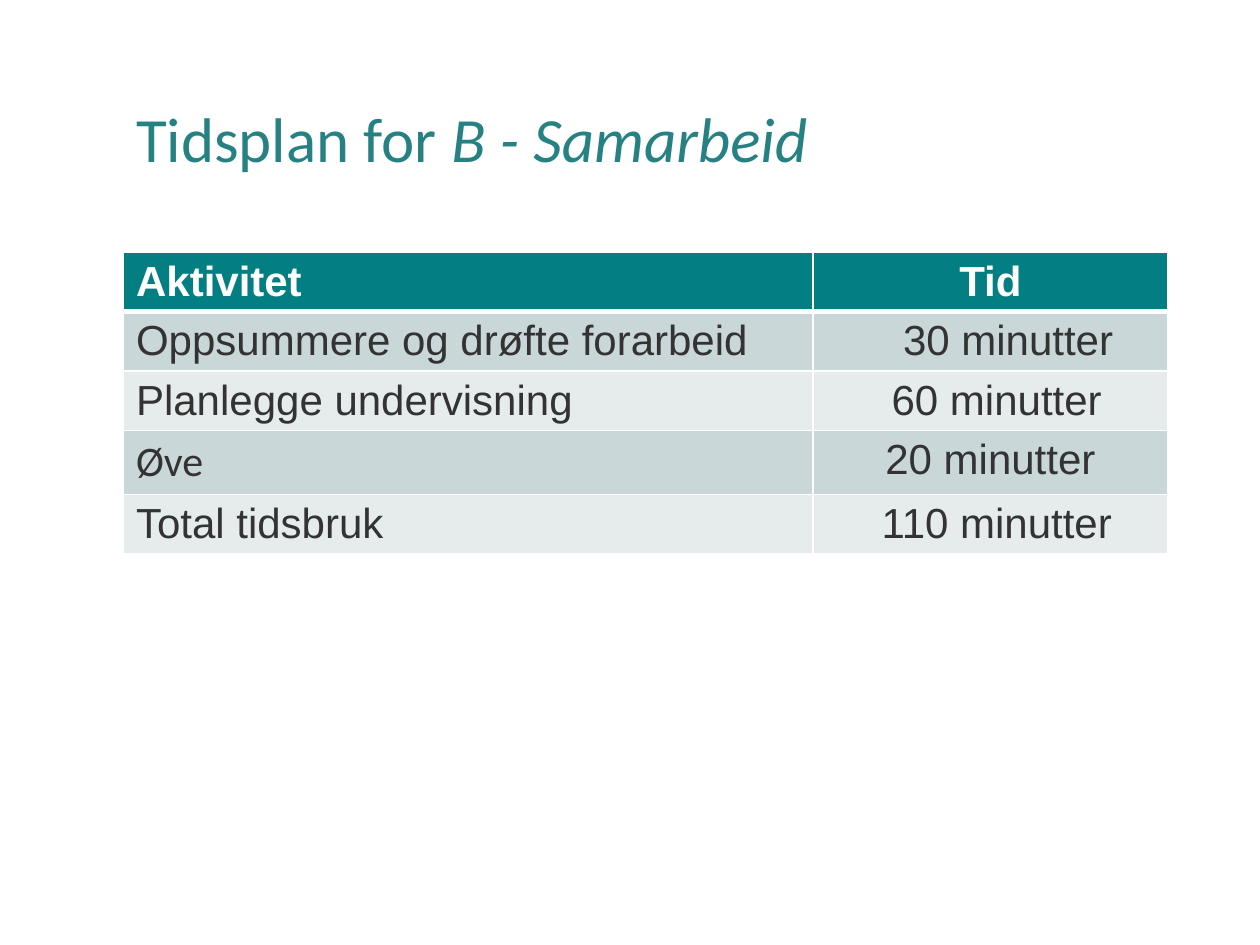
from lxml.etree import SubElement
from pptx import Presentation
from pptx.dml.color import RGBColor
from pptx.enum.text import MSO_ANCHOR, MSO_AUTO_SIZE, PP_ALIGN
from pptx.oxml.ns import qn
from pptx.util import Inches, Pt

COLORS = {"title": "268183", "header": "037F83", "odd": "CAD7D8",
          "even": "E6ECEC", "text": "333333", "white": "FFFFFF"}
WIDTH, HEIGHT = 10, 7.5
LEFT, SPAN = 0.098 * WIDTH, 0.829 * WIDTH
ACTIVITY_SHARE = 0.66
ROW_HEIGHT = 0.41
MARGIN = 0.1
ROWS = [
    ("Aktivitet", "Tid", "Arial", 0),
    ("Oppsummere og drøfte forarbeid", "30 minutter", "Arial", 0.28),
    ("Planlegge undervisning", "60 minutter", "Arial", 0.1),
    ("Øve", "20 minutter", "Calibri", 0),
    ("Total tidsbruk", "110 minutter", "Arial", 0.1),
]


def add_text(p, text, size=24, font="Arial", color="text", bold=False,
             italic=False, align=PP_ALIGN.LEFT):
    """Append a formatted run to a paragraph."""
    p.alignment = align
    r = p.add_run()
    r.text = text
    r.font.size, r.font.name = Pt(size), font
    r.font.bold, r.font.italic = bold, italic
    r.font.color.rgb = RGBColor.from_string(COLORS[color])


def add_borders(cell, top=1, bottom=1):
    """Draw white lines on the four sides of a cell."""
    tc_pr = cell._tc.get_or_add_tcPr()
    for side, width in (("L", 1), ("R", 1), ("T", top), ("B", bottom)):
        ln = SubElement(tc_pr, qn(f"a:ln{side}"), w=str(Pt(width)))
        fill = SubElement(ln, qn("a:solidFill"))
        SubElement(fill, qn("a:srgbClr"), val=COLORS["white"])


def fill_title(s, left, top, width, height):
    """Place and write the slide title."""
    sp = s.shapes.title
    sp.left, sp.top = Inches(left), Inches(top)
    sp.width, sp.height = Inches(width), Inches(height)
    tf = sp.text_frame
    tf.auto_size = MSO_AUTO_SIZE.NONE
    tf.vertical_anchor = MSO_ANCHOR.MIDDLE
    p = tf.paragraphs[0]
    p.line_spacing = 0.9
    for text, italic in (("Tidsplan for ", False), ("B - Samarbeid", True)):
        add_text(p, text, size=36, font="Calibri", color="title", italic=italic)


def add_schedule(s, left, top, width, height):
    """Add the table of activities and times."""
    table = s.shapes.add_table(len(ROWS), 2, Inches(left), Inches(top),
                               Inches(width), Inches(height)).table
    for col, share in zip(table.columns, (ACTIVITY_SHARE, 1 - ACTIVITY_SHARE)):
        col.width = Inches(width * share)
    for i, (activity, time, font, indent) in enumerate(ROWS):
        header = i == 0
        fill = "header" if header else ("even", "odd")[i % 2]
        columns = ((activity, font, PP_ALIGN.LEFT, 0),
                   (time, "Arial", PP_ALIGN.CENTER, indent))
        for j, (text, face, align, extra) in enumerate(columns):
            cell = table.cell(i, j)
            add_borders(cell, top=3 if i == 1 else 1, bottom=3 if header else 1)
            cell.fill.solid()
            cell.fill.fore_color.rgb = RGBColor.from_string(COLORS[fill])
            cell.margin_left = Inches(MARGIN + extra)
            add_text(cell.text_frame.paragraphs[0], text, font=face, align=align,
                     color="white" if header else "text", bold=header)


def main():
    """Build and save the slide."""
    prs = Presentation()
    prs.slide_width, prs.slide_height = Inches(WIDTH), Inches(HEIGHT)
    s = prs.slides.add_slide(prs.slide_layouts[5])
    fill_title(s, LEFT, 0.4, SPAN, 1.45)
    add_schedule(s, LEFT, 2, SPAN, ROW_HEIGHT * len(ROWS))
    prs.save("out.pptx")


if __name__ == "__main__":
    main()
